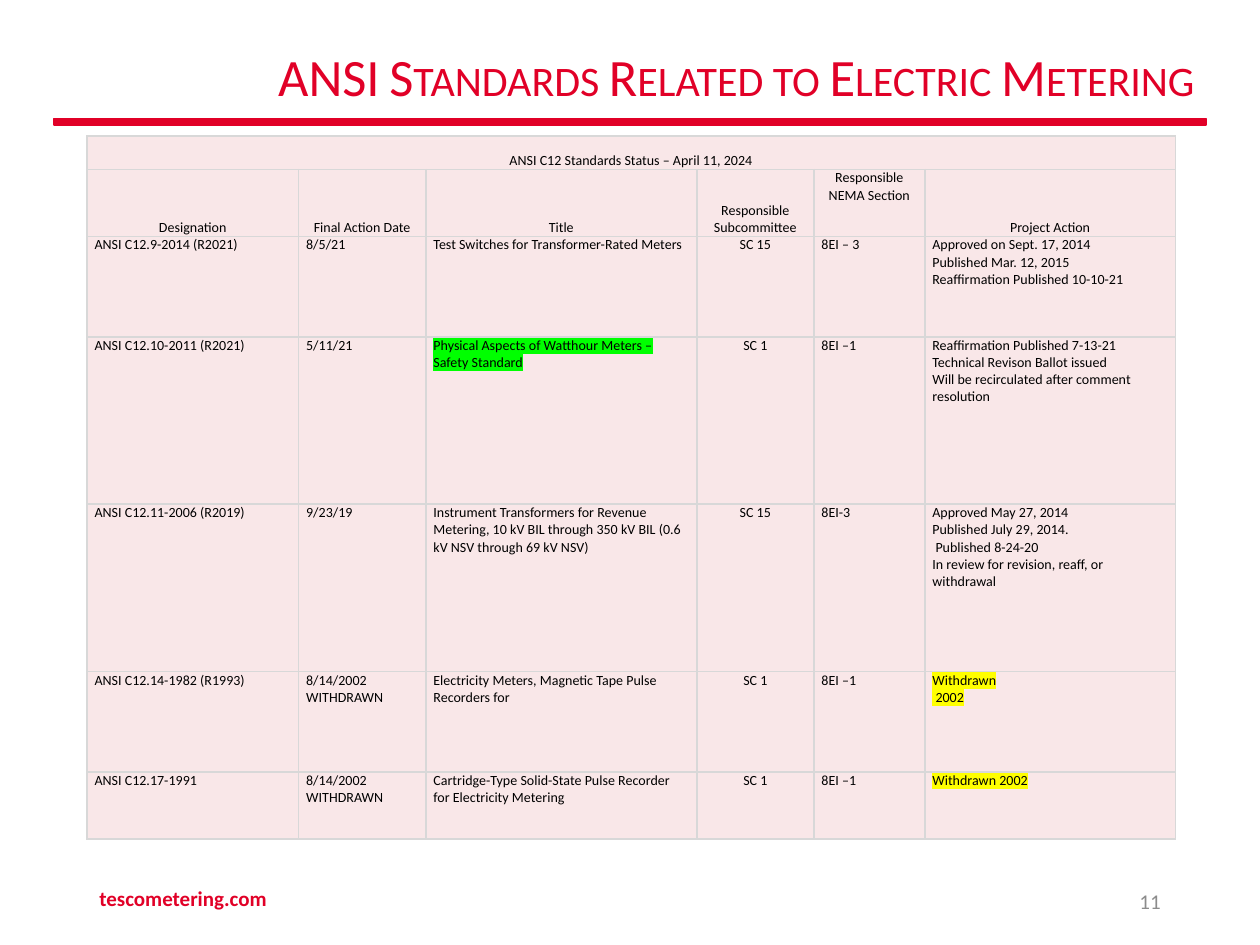
from lxml import etree
from pptx import Presentation, util as u
from pptx.dml.color import RGBColor
from pptx.enum import shapes, text
from pptx.oxml.ns import qn

COLORS = {"red": "E10027", "gray": "8C8C8C", "black": "000000", "cell": "F9E7E8",
          "border": "D8D8D8", "green": "00FF00", "yellow": "FFFF00"}
FONT = "Calibri"
CENTER, RIGHT = text.PP_ALIGN.CENTER, text.PP_ALIGN.RIGHT
TOP, MIDDLE, BOTTOM = (text.MSO_ANCHOR.TOP, text.MSO_ANCHOR.MIDDLE,
                       text.MSO_ANCHOR.BOTTOM)

TITLE = "ANSI Standards Related to Electric Metering"
CAPTION = "ANSI C12 Standards Status – April 11, 2024"
HEADERS = ["Designation", "Final Action Date", "Title", "Responsible Subcommittee",
           "Responsible NEMA Section", "Project Action"]
STANDARDS = [
    ["ANSI C12.9-2014 (R2021)", "8/5/21", "Test Switches for Transformer-Rated Meters",
     "SC 15", "8EI – 3",
     "Approved on Sept. 17, 2014\nPublished Mar. 12, 2015\nReaffirmation Published 10-10-21"],
    ["ANSI C12.10-2011 (R2021)", "5/11/21",
     "Physical Aspects of Watthour Meters – Safety Standard", "SC 1", "8EI –1",
     "Reaffirmation Published 7-13-21\nTechnical Revison Ballot issued\n"
     "Will be recirculated after comment resolution"],
    ["ANSI C12.11-2006 (R2019)", "9/23/19",
     "Instrument Transformers for Revenue Metering, 10 kV BIL through 350 kV BIL "
     "(0.6 kV NSV through 69 kV NSV)", "SC 15", "8EI-3",
     "Approved May 27, 2014\nPublished July 29, 2014.\n Published 8-24-20\n"
     "In review for revision, reaff, or withdrawal"],
    ["ANSI C12.14-1982 (R1993)", "8/14/2002\nWITHDRAWN",
     "Electricity Meters, Magnetic Tape Pulse Recorders for", "SC 1", "8EI –1",
     "Withdrawn\n 2002"],
    ["ANSI C12.17-1991", "8/14/2002\nWITHDRAWN",
     "Cartridge-Type Solid-State Pulse Recorder for Electricity Metering", "SC 1",
     "8EI –1", "Withdrawn 2002"],
]
HIGHLIGHTS = {(3, 2): "green", (5, 5): "yellow", (6, 5): "yellow"}  # (row, column)
COLUMN_WIDTHS = [1.68, 1.01, 2.15, 0.93, 0.88, 1.99]
ROW_UNITS = [1, 2, 3, 5, 5, 3, 2]
TABLE_LEFT, TABLE_TOP, TABLE_HEIGHT = 0.69, 1.08, 5.58
SUBCOMMITTEE, SECTION = 3, 4

FOOTERS = [  # text, left, top, width, format
    ("tescometering.com", 0.69, 6.93, 3.38, {"size": 12, "color": "red", "bold": True}),
    ("11", 7.06, 6.95, 2.25, {"size": 12, "color": "gray", "alignment": RIGHT}),
]


def rgb(name):
    return RGBColor.from_string(COLORS[name])


def write(frame, content, size, color, alignment=None, bold=False, highlight=None):
    """Fill a text frame, one paragraph per line of content."""
    frame.word_wrap = True
    for number, line in enumerate(content.split("\n")):
        paragraph = frame.paragraphs[0] if number == 0 else frame.add_paragraph()
        paragraph.alignment = alignment
        run = paragraph.add_run()
        run.text = line
        formats = {"name": FONT, "size": u.Pt(size), "bold": bold}
        for key, value in formats.items():
            setattr(run.font, key, value)
        run.font.color.rgb = rgb(color)
        if highlight:
            mark = etree.Element(qn("a:highlight"))
            etree.SubElement(mark, qn("a:srgbClr"), val=COLORS[highlight])
            run.font._element.find(qn("a:solidFill")).addnext(mark)


def style_cell(cell, anchor):
    formats = {"margin_left": u.Inches(0.06), "margin_right": u.Inches(0.06),
               "margin_top": 0, "margin_bottom": 0, "vertical_anchor": anchor}
    for key, value in formats.items():
        setattr(cell, key, value)
    cell.fill.solid()
    cell.fill.fore_color.rgb = rgb("cell")
    properties = cell._tc.get_or_add_tcPr()
    for position, side in enumerate(("a:lnL", "a:lnR", "a:lnT", "a:lnB")):
        border = etree.Element(qn(side), w=str(u.Pt(1)))
        fill = etree.SubElement(border, qn("a:solidFill"))
        etree.SubElement(fill, qn("a:srgbClr"), val=COLORS["border"])
        properties.insert(position, border)


def add_title(slide):
    title = slide.shapes.title
    box = {"left": 1.7, "top": 0.26, "width": 7.88, "height": 0.74}
    for key, value in box.items():
        setattr(title, key, u.Inches(value))
    title.text_frame.vertical_anchor = MIDDLE
    write(title.text_frame, TITLE, 30, "red", RIGHT)
    paragraph = title.text_frame.paragraphs[0]
    paragraph.line_spacing = 0.9
    paragraph.runs[0].font._element.set("cap", "small")


def add_rule(slide):
    rule = slide.shapes.add_shape(shapes.MSO_SHAPE.RECTANGLE, *map(
        u.Inches, (0.43, 0.94, 9.14, 0.05)))
    rule.shadow.inherit = False
    rule.fill.solid()
    rule.fill.fore_color.rgb = rgb("red")
    rule.line.color.rgb = rgb("red")
    rule.line.width = u.Pt(1)


def add_standards_table(slide):
    rows = [[CAPTION] + [""] * (len(HEADERS) - 1), HEADERS] + STANDARDS
    table = slide.shapes.add_table(len(rows), len(HEADERS), *map(
        u.Inches, (TABLE_LEFT, TABLE_TOP, sum(COLUMN_WIDTHS), TABLE_HEIGHT))).table
    table.first_row = table.horz_banding = False
    for column, width in zip(table.columns, COLUMN_WIDTHS):
        column.width = u.Inches(width)
    for row, units in zip(table.rows, ROW_UNITS):
        row.height = u.Inches(TABLE_HEIGHT * units / sum(ROW_UNITS))
    for r, contents in enumerate(rows):
        heading = r < 2
        for c, content in enumerate(contents):
            cell = table.cell(r, c)
            top = not heading or (r == 1 and c == SECTION)
            style_cell(cell, TOP if top else BOTTOM)
            if content:
                write(cell.text_frame, content, 8, "black",
                      CENTER if heading or c == SUBCOMMITTEE else None,
                      highlight=HIGHLIGHTS.get((r, c)))
    table.cell(0, 0).merge(table.cell(0, len(HEADERS) - 1))


def add_footers(slide):
    for content, left, top, width, formats in FOOTERS:
        box = slide.shapes.add_textbox(*map(u.Inches, (left, top, width, 0.4)))
        box.text_frame.vertical_anchor = MIDDLE
        write(box.text_frame, content, **formats)


def main():
    presentation = Presentation()
    presentation.slide_width, presentation.slide_height = u.Inches(10), u.Inches(7.5)
    slide = presentation.slides.add_slide(presentation.slide_layouts[5])
    add_rule(slide)
    add_title(slide)
    add_footers(slide)
    add_standards_table(slide)
    presentation.save("out.pptx")


if __name__ == "__main__":
    main()
